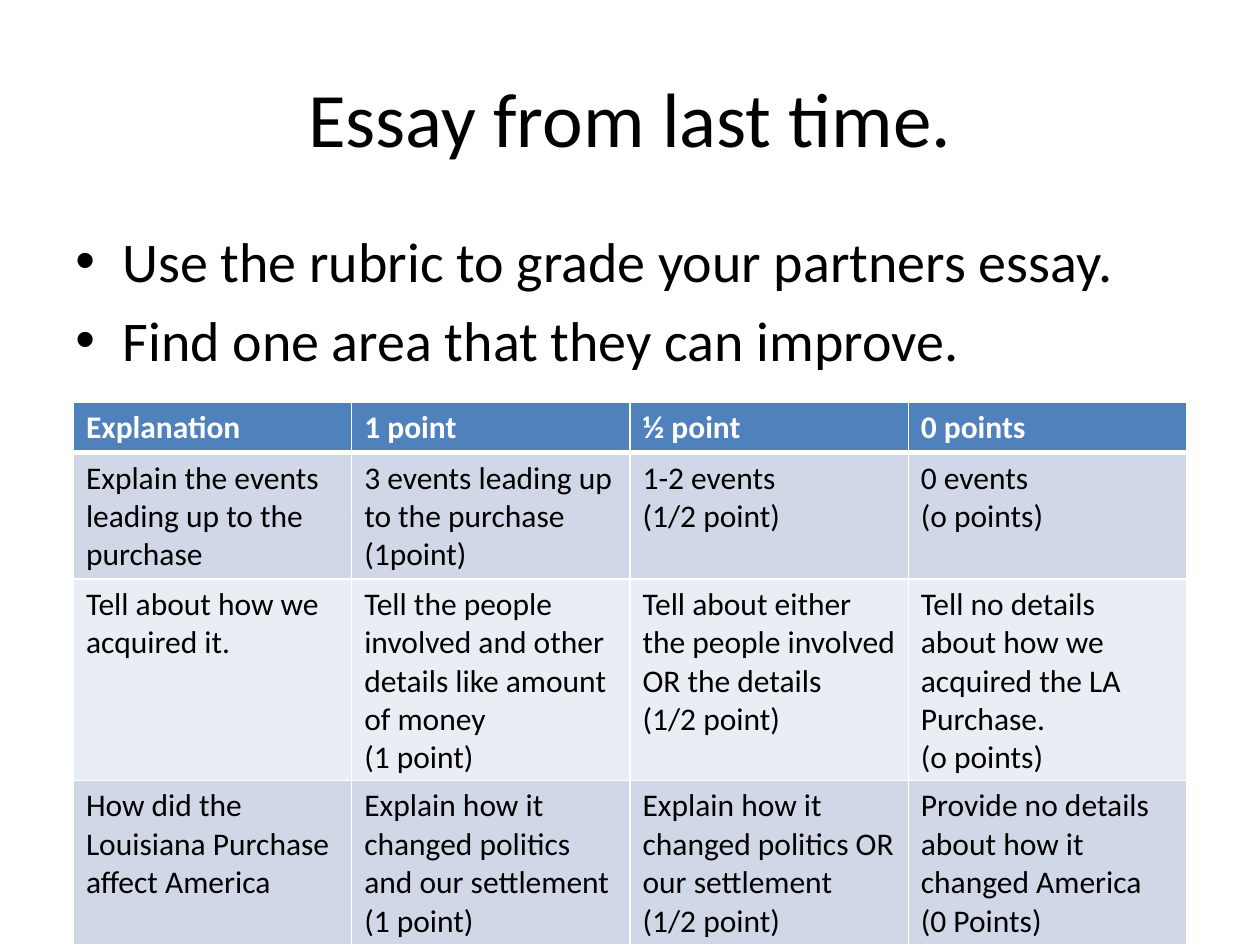
from lxml.etree import SubElement as Sub
from pptx import Presentation
from pptx.dml.color import RGBColor as RGB
from pptx.enum.text import MSO_ANCHOR as Anchor, PP_ALIGN as Align
from pptx.oxml.ns import qn
from pptx.util import Cm, Pt

# Content
TITLE = "Essay from last time."
TASKS = [
    "Use the rubric to grade your partners essay.",
    "Find one area that they can improve.",
]
RUBRIC = [
    ["Explanation", "1 point", "½ point", "0 points"],
    ["Explain the events leading up to the purchase",
     "3 events leading up to the purchase\n(1point)",
     "1-2 events\n(1/2 point)",
     "0 events\n(o points)"],
    ["Tell about how we acquired it.",
     "Tell the people involved and other details like amount of money\n(1 point)",
     "Tell about either the people involved OR the details\n(1/2 point)",
     "Tell no details about how we acquired the LA Purchase.\n(o points)"],
    ["How did the Louisiana Purchase affect America",
     "Explain how it changed politics and our settlement\n(1 point)",
     "Explain how it changed politics OR our settlement\n(1/2 point)",
     "Provide no details about how it changed America\n(0 Points)"],
]

# Format
BLACK, WHITE = RGB(0, 0, 0), RGB(255, 255, 255)
BLUE = RGB(0x4F, 0x81, 0xBD)
BANDS = [RGB(0xE9, 0xED, 0xF4), RGB(0xD0, 0xD8, 0xE8)]
HEAD = {"size": Pt(18), "bold": True, "color": WHITE}
CELL = {"size": Pt(18), "bold": False, "color": BLACK}
BIG = {"size": Pt(44), "color": BLACK}
ITEM = {"size": Pt(32), "color": BLACK}
HIGH = [Cm(0.97), Cm(2.39), Cm(3.84), Cm(3.1)]
WIDE = Cm(5.61)
INDENT = Cm(0.95)


def write(frame, text, look):
    """Fill a text frame, one paragraph per line, in one look."""
    frame.text = text
    frame.word_wrap = True
    for para in frame.paragraphs:
        for run in para.runs:
            run.font.name = "Calibri"
            for key, val in look.items():
                if key == "color":
                    run.font.color.rgb = val
                else:
                    setattr(run.font, key, val)


def bullet(para):
    para.space_before = Pt(6.4)
    props = para._p.get_or_add_pPr()
    props.set("marL", str(INDENT))
    props.set("indent", str(-INDENT))
    Sub(props, qn("a:buFont"), typeface="Arial")
    Sub(props, qn("a:buChar"), char="•")


def border(cell, sides):
    props = cell._tc.get_or_add_tcPr()
    for side, size in sides.items():
        line = Sub(props, qn("a:ln" + side), w=str(Pt(size)))
        fill = Sub(line, qn("a:solidFill"))
        Sub(fill, qn("a:srgbClr"), val=str(WHITE))


deck = Presentation()
deck.slide_width, deck.slide_height = Cm(25.4), Cm(19.05)
slide = deck.slides.add_slide(deck.slide_layouts[6])
shapes = slide.shapes

# Title
title = shapes.add_textbox(Cm(1.27), Cm(0.76), Cm(22.86), Cm(3.18)).text_frame
write(title, TITLE, BIG)
title.vertical_anchor = Anchor.MIDDLE
title.paragraphs[0].alignment = Align.CENTER

# Bulleted tasks
body = shapes.add_textbox(Cm(1.27), Cm(4.45), Cm(22.86), Cm(12.57)).text_frame
write(body, "\n".join(TASKS), ITEM)
for para in body.paragraphs:
    bullet(para)

# Rubric table
rows, cols = len(RUBRIC), len(RUBRIC[0])
table = shapes.add_table(rows, cols, Cm(1.48), Cm(8.11),
                         WIDE * cols, sum(HIGH)).table
for col in table.columns:
    col.width = WIDE
for r, texts in enumerate(RUBRIC):
    table.rows[r].height = HIGH[r]
    for c, text in enumerate(texts):
        cell = table.cell(r, c)
        write(cell.text_frame, text, CELL if r else HEAD)
        border(cell, {"L": 1, "R": 1, "T": 3 if r == 1 else 1,
                      "B": 1 if r else 3})
        cell.fill.solid()
        cell.fill.fore_color.rgb = BANDS[r % 2] if r else BLUE

deck.save("out.pptx")
